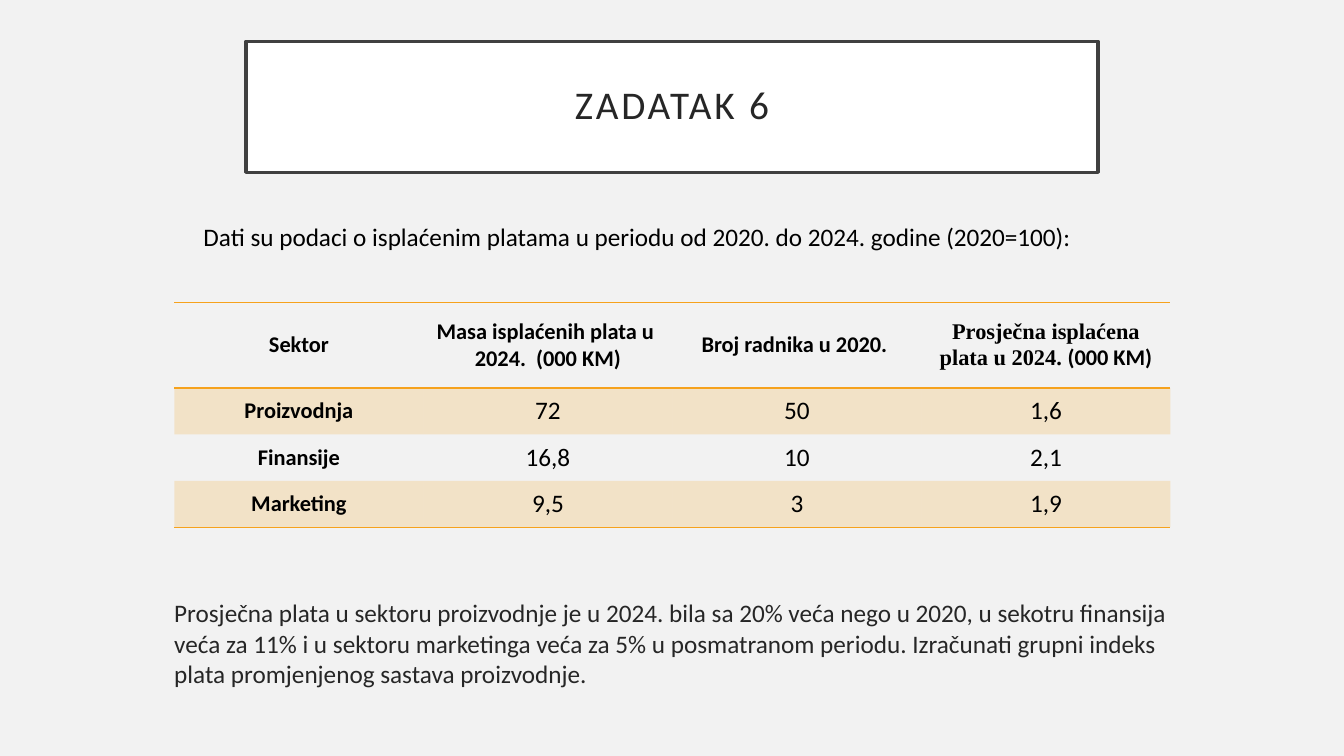
from dataclasses import dataclass

from lxml.etree import SubElement
from pptx import Presentation
from pptx.dml.color import RGBColor
from pptx.enum.shapes import MSO_SHAPE
from pptx.enum.text import MSO_ANCHOR, PP_ALIGN
from pptx.oxml import parse_xml
from pptx.oxml.ns import nsdecls, qn
from pptx.util import Inches, Pt


@dataclass(frozen=True)
class Theme:
    background: str = "F2F2F2"
    white: str = "FFFFFF"
    frame: str = "404040"
    dark: str = "262626"
    black: str = "000000"
    accent: str = "F6A21D"
    font: str = "Calibri"
    serif: str = "Times New Roman"
    title_size: int = 28
    body_size: int = 18
    label_size: int = 16


theme = Theme()
NO_TABLE_STYLE = "{2D5ABB26-0587-4C30-8999-92F81FD0307C}"


def style_paragraph(paragraph, size, color, bold=False):
    paragraph.font.name = theme.font
    paragraph.font.size = Pt(size)
    paragraph.font.bold = bold
    paragraph.font.color.rgb = RGBColor.from_string(color)


def add_border(cell, tag, position):
    """Draw one cell edge; edges come before the fill in the cell properties."""
    border = parse_xml(
        f'<a:{tag} {nsdecls("a")} w="12700"><a:solidFill>'
        f'<a:srgbClr val="{theme.accent}"/></a:solidFill></a:{tag}>'
    )
    cell._tc.get_or_add_tcPr().insert(position, border)


presentation = Presentation()
presentation.slide_width = Inches(13.33)
presentation.slide_height = Inches(7.5)
slide = presentation.slides.add_slide(presentation.slide_layouts[6])
slide.background.fill.solid()
slide.background.fill.fore_color.rgb = RGBColor.from_string(theme.background)

# Title
title = slide.shapes.add_shape(
    MSO_SHAPE.RECTANGLE, Inches(2.44), Inches(0.41), Inches(8.45), Inches(1.3)
)
title.shadow.inherit = False
title.fill.solid()
title.fill.fore_color.rgb = RGBColor.from_string(theme.white)
title.line.color.rgb = RGBColor.from_string(theme.frame)
title.line.width = Pt(2.5)
title.text_frame.vertical_anchor = MSO_ANCHOR.MIDDLE
title.text_frame.text = "ZADATAK 6"
paragraph = title.text_frame.paragraphs[0]
paragraph.alignment = PP_ALIGN.CENTER
paragraph.line_spacing = 0.9
style_paragraph(paragraph, theme.title_size, theme.dark)
paragraph.runs[0]._r.get_or_add_rPr().set("spc", "200")

# Introduction and task: left, top, width, height, indent, space before, color, text
texts = [
    (1.8, 2.15, 9.73, 0.4, 0.12, 0, theme.black,
     "Dati su podaci o isplaćenim platama u periodu od 2020. do 2024. godine (2020=100):"),
    (1.63, 5.88, 10.07, 1.36, 0, 10, theme.dark,
     "Prosječna plata u sektoru proizvodnje je u 2024. bila sa 20% veća nego u 2020, "
     "u sekotru finansija veća za 11% i u sektoru marketinga veća za 5% u posmatranom "
     "periodu. Izračunati grupni indeks plata promjenjenog sastava proizvodnje."),
]
for left, top, width, height, indent, space_before, color, text in texts:
    box = slide.shapes.add_textbox(Inches(left), Inches(top), Inches(width), Inches(height))
    box.text_frame.word_wrap = True
    box.text_frame.text = text
    paragraph = box.text_frame.paragraphs[0]
    paragraph.space_before = Pt(space_before)
    paragraph._p.get_or_add_pPr().set("marL", str(Inches(indent)))
    style_paragraph(paragraph, theme.body_size, color)

# Salary table; a cell is a list of (text, font) runs where fonts differ
rows = [
    ["Sektor", "Masa isplaćenih plata u  2024.  (000 KM)", "Broj radnika u 2020. ",
     [("Prosječna isplaćena plata u 2024. ", theme.serif), ("(000 KM)", theme.font)]],
    ["Proizvodnja", "72", "50", "1,6"],
    ["Finansije", "16,8", "10", "2,1"],
    ["Marketing", "9,5", "3", "1,9"],
]
row_heights = [0.85, 0.46, 0.46, 0.46]
column_width = 2.47
table = slide.shapes.add_table(
    len(rows), len(rows[0]), Inches(1.73), Inches(3),
    Inches(column_width * len(rows[0])), Inches(sum(row_heights)),
).table
table._tbl.tblPr.find(qn("a:tableStyleId")).text = NO_TABLE_STYLE
for column in table.columns:
    column.width = Inches(column_width)

for row_index, (values, height) in enumerate(zip(rows, row_heights)):
    table.rows[row_index].height = Inches(height)
    for column_index, value in enumerate(values):
        cell = table.cell(row_index, column_index)
        cell.vertical_anchor = MSO_ANCHOR.MIDDLE
        cell.margin_left = cell.margin_right = Inches(0.07)
        cell.margin_top = cell.margin_bottom = 0

        paragraph = cell.text_frame.paragraphs[0]
        paragraph.alignment = PP_ALIGN.CENTER
        is_label = row_index == 0 or column_index == 0
        size = theme.label_size if is_label else theme.body_size
        style_paragraph(paragraph, size, theme.black, is_label)
        for text, font in [(value, theme.font)] if isinstance(value, str) else value:
            run = paragraph.add_run()
            run.text = text
            run.font.name = font

        if row_index % 2:
            cell.fill.solid()
            cell.fill.fore_color.rgb = RGBColor.from_string(theme.accent)
            fill_color = cell._tc.tcPr.find(".//" + qn("a:srgbClr"))
            SubElement(fill_color, qn("a:alpha")).set("val", "20000")
        else:
            cell.fill.background()
        if row_index in (0, len(rows) - 1):
            add_border(cell, "lnB", 0)
        if row_index == 0:
            add_border(cell, "lnT", 0)

presentation.save("out.pptx")
